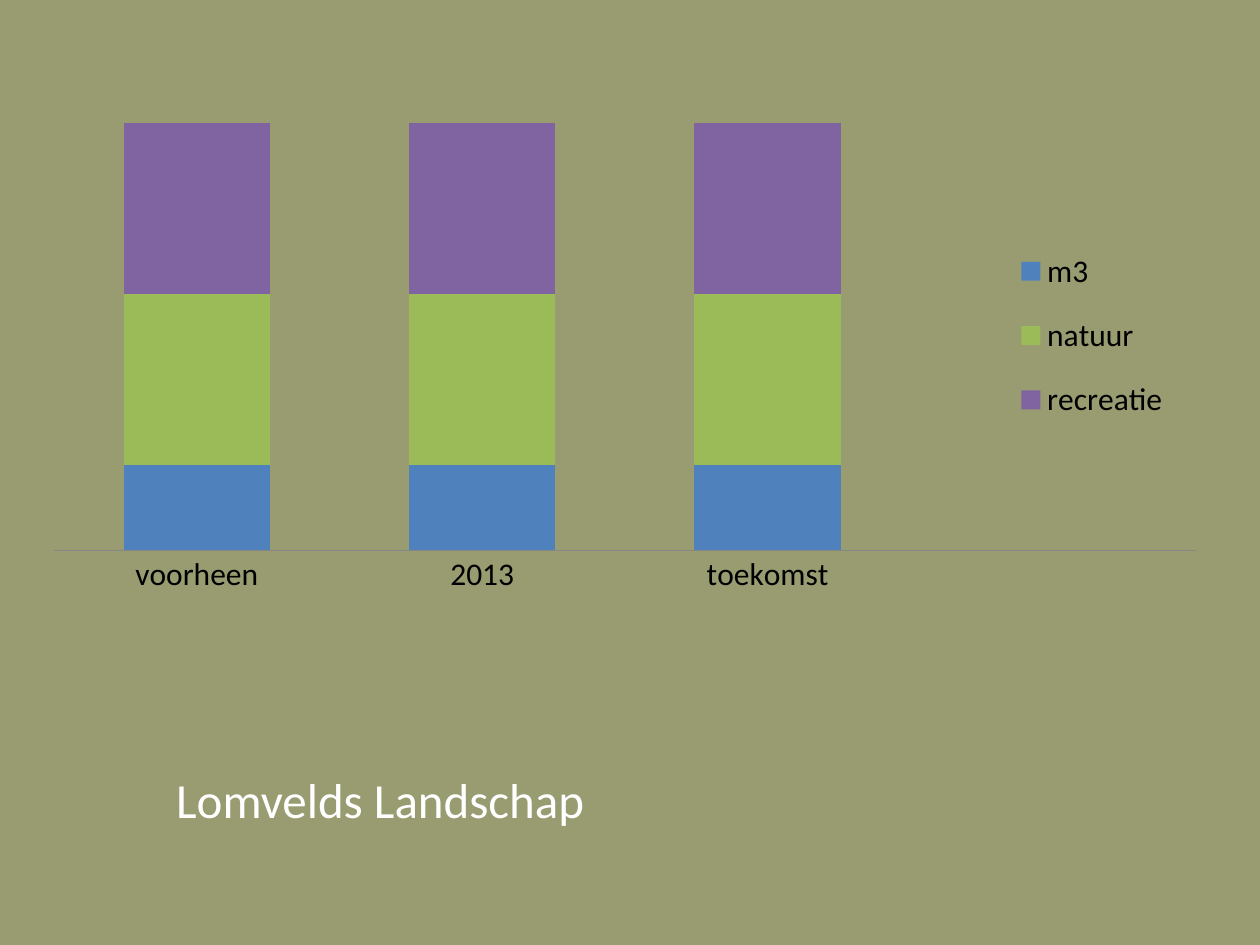
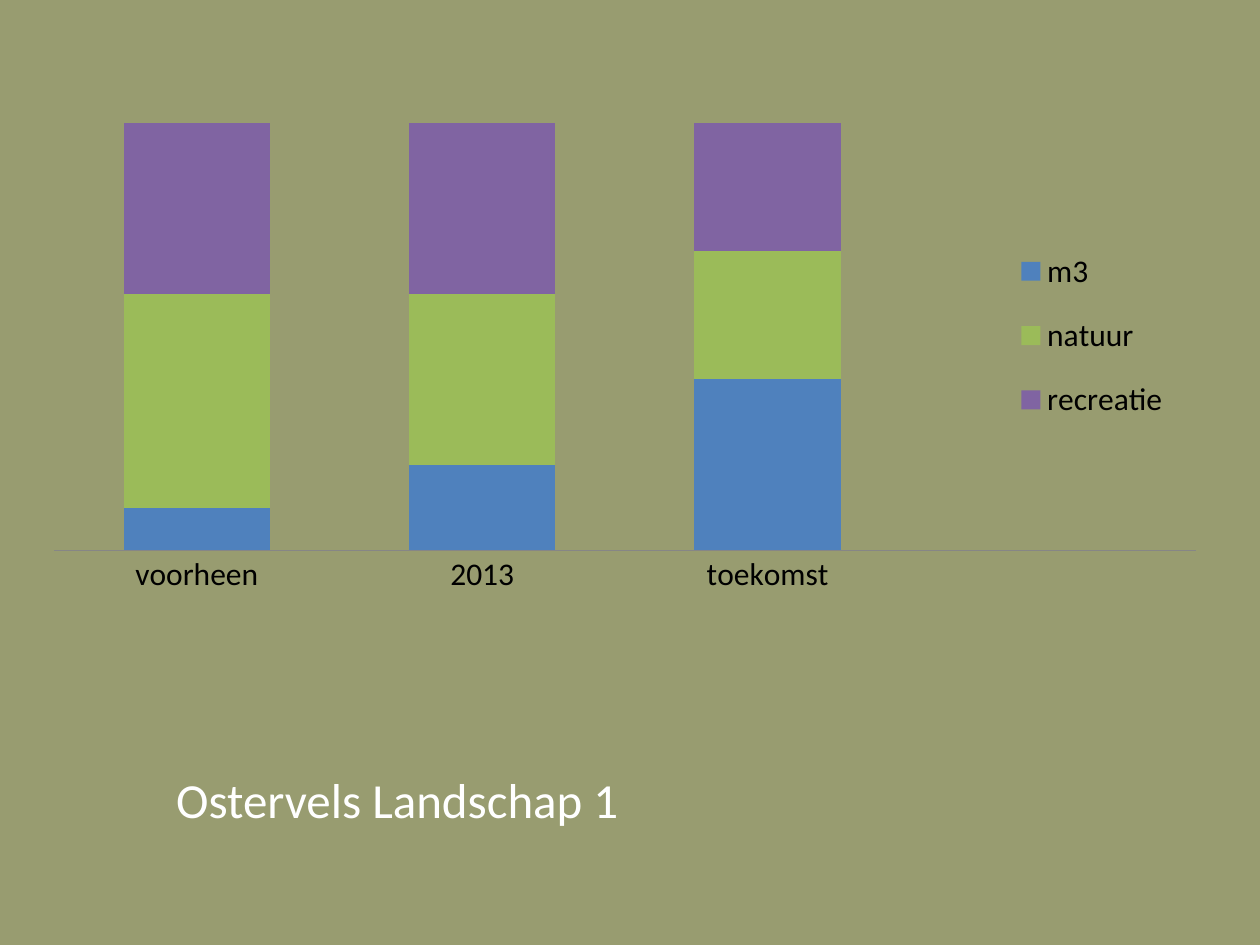
from dataclasses import dataclass

from lxml.etree import SubElement
from pptx import Presentation
from pptx.chart.data import CategoryChartData
from pptx.dml.color import RGBColor as RGB
from pptx.enum.chart import XL_CHART_TYPE as ChartType
from pptx.enum.chart import XL_LEGEND_POSITION as LegendPosition
from pptx.enum.chart import XL_TICK_MARK as TickMark
from pptx.enum.text import MSO_AUTO_SIZE as AutoSize
from pptx.oxml.ns import qn
from pptx.util import Inches, Pt

PERIODS = ["voorheen", "2013", "toekomst", ""]  # last column makes room for the legend
LANDSCAPES = [
    ("Lomvelds Landschap", {
        "m3": [20, 20, 20, None],
        "natuur": [40, 40, 40, None],
        "recreatie": [40, 40, 40, None],
    }),
    ("Ostervels Landschap 1", {
        "m3": [10, 20, 40, None],
        "natuur": [50, 40, 30, None],
        "recreatie": [40, 40, 30, None],
    }),
]


@dataclass(frozen=True)
class Theme:
    font: str = "Calibri"
    background: RGB = RGB(0x98, 0x9C, 0x70)
    chart_text: RGB = RGB(0, 0, 0)
    title_text: RGB = RGB(0xFF, 0xFF, 0xFF)
    axis_line: RGB = RGB(0x86, 0x86, 0x86)
    series: tuple = (RGB(0x4F, 0x81, 0xBD), RGB(0x9B, 0xBB, 0x59), RGB(0x80, 0x64, 0xA2))
    chart_size: Pt = Pt(18)
    title_size: Pt = Pt(28)


THEME = Theme()

# Inches: left, top, width, height
CHART_BOX = [Inches(n) for n in (0.28, 0.36, 9.37, 5.12)]
TITLE_BOX = [Inches(n) for n in (1.3, 6.11, 6.69, 0.53)]
# Percent of the chart: left, top, width, height
PLOT_PERCENT = (1.6, 12.1, 96.7, 66.2)
LEGEND_PERCENT = (83, 28, 13, 34)


def set_manual_layout(element, position, percents, inner=False):
    """Place a chart part by percent of the chart, as child number `position`."""
    for old_layout in element.findall(qn("c:layout")):
        element.remove(old_layout)
    layout = SubElement(element, qn("c:layout"))
    element.insert(position, layout)
    manual = SubElement(layout, qn("c:manualLayout"))
    settings = [("layoutTarget", "inner")] if inner else []
    settings += [("xMode", "edge"), ("yMode", "edge")]
    settings += [(tag, f"{percent / 100:.3f}") for tag, percent in zip("xywh", percents)]
    for tag, value in settings:
        SubElement(manual, qn(f"c:{tag}")).set("val", value)


def style_font(font, size, color):
    font.name = THEME.font
    font.size = size
    font.color.rgb = color


def add_share_chart(slide, shares):
    data = CategoryChartData()
    data.categories = PERIODS
    for name, values in shares.items():
        data.add_series(name, values)
    chart = slide.shapes.add_chart(ChartType.COLUMN_STACKED_100, *CHART_BOX, data).chart
    chart.has_title = False
    style_font(chart.font, THEME.chart_size, THEME.chart_text)

    plot = chart.plots[0]
    plot.gap_width = 95
    plot.overlap = 100
    plot.vary_by_categories = False
    for series, color in zip(plot.series, THEME.series):
        series.format.fill.solid()
        series.format.fill.fore_color.rgb = color

    chart.value_axis.visible = False
    chart.value_axis.has_major_gridlines = False
    axis = chart.category_axis
    axis.major_tick_mark = axis.minor_tick_mark = TickMark.NONE
    axis.format.line.color.rgb = THEME.axis_line
    axis.format.line.width = Pt(0.75)
    style_font(axis.tick_labels.font, THEME.chart_size, THEME.chart_text)

    chart.has_legend = True
    legend = chart.legend
    legend.position = LegendPosition.TOP
    legend.include_in_layout = False
    style_font(legend.font, THEME.chart_size, THEME.chart_text)

    plot_area = chart.element.find(".//" + qn("c:plotArea"))
    set_manual_layout(plot_area, 0, PLOT_PERCENT, inner=True)
    set_manual_layout(chart.element.find(".//" + qn("c:legend")), 1, LEGEND_PERCENT)


def add_title(slide, title):
    frame = slide.shapes.add_textbox(*TITLE_BOX).text_frame
    frame.word_wrap = True
    frame.auto_size = AutoSize.SHAPE_TO_FIT_TEXT
    paragraph = frame.paragraphs[0]
    paragraph.line_spacing = 0.9
    run = paragraph.add_run()
    run.text = title
    style_font(run.font, THEME.title_size, THEME.title_text)


def main():
    presentation = Presentation()
    presentation.slide_width, presentation.slide_height = Inches(10), Inches(7.5)
    for title, shares in LANDSCAPES:
        slide = presentation.slides.add_slide(presentation.slide_layouts[6])
        slide.background.fill.solid()
        slide.background.fill.fore_color.rgb = THEME.background
        add_share_chart(slide, shares)
        add_title(slide, title)
    presentation.save("out.pptx")


if __name__ == "__main__":
    main()
